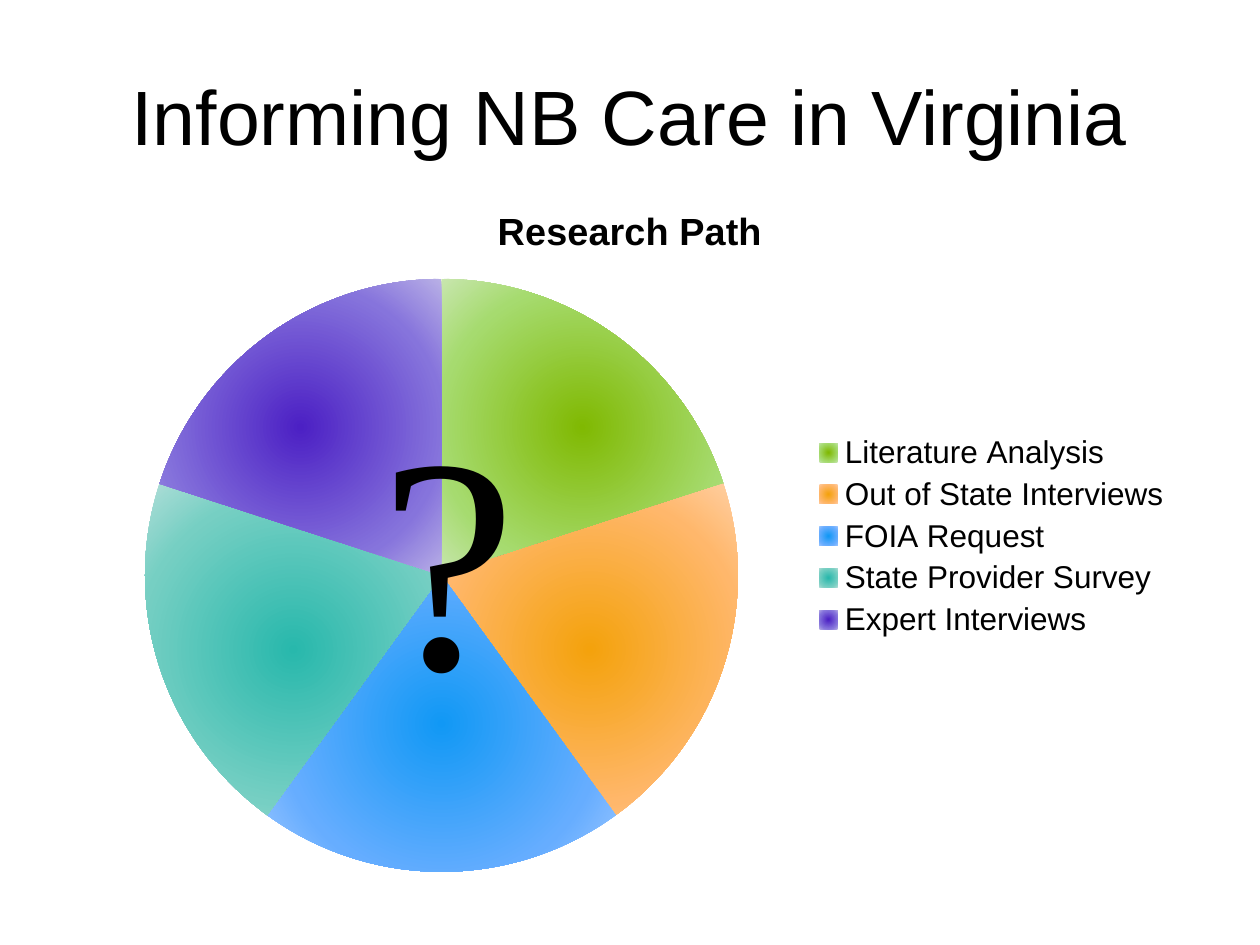
"""Build the Research Path slide with its pie chart and question mark."""
from dataclasses import dataclass

from pptx import Presentation
from pptx.chart.data import CategoryChartData
from pptx.dml.color import RGBColor
from pptx.enum.chart import XL_CHART_TYPE, XL_LEGEND_POSITION
from pptx.enum.text import MSO_ANCHOR, PP_ALIGN
from pptx.oxml import parse_xml
from pptx.oxml.ns import nsdecls
from pptx.util import Pt

PIE = XL_CHART_TYPE.PIE
RIGHT = XL_LEGEND_POSITION.RIGHT
CENTER = PP_ALIGN.CENTER
TOP, BOTTOM = MSO_ANCHOR.TOP, MSO_ANCHOR.BOTTOM
BLACK = RGBColor(0x00, 0x00, 0x00)
SANS, SERIF = "Arial", "Times New Roman"
CHART_TITLE = "Research Path"
PIE_LAYOUT = {"x": 0.06, "y": 0.14, "w": 0.54, "h": 0.83}


@dataclass(frozen=True)
class Slice:
    label: str
    value: int
    core: RGBColor
    middle: RGBColor
    rim: RGBColor


@dataclass(frozen=True)
class Label:
    text: str
    left: float
    top: float
    width: float
    height: float
    size: int
    font: str
    anchor: MSO_ANCHOR


SLICES = [
    Slice("Literature Analysis", 20, RGBColor(0x80, 0xB9, 0x02),
          RGBColor(0xA6, 0xDB, 0x6F), RGBColor(0xC8, 0xE6, 0xAE)),
    Slice("Out of State Interviews", 20, RGBColor(0xF4, 0xA2, 0x0C),
          RGBColor(0xFF, 0xB7, 0x6B), RGBColor(0xFF, 0xD0, 0xA4)),
    Slice("FOIA Request", 20, RGBColor(0x11, 0x98, 0xF5),
          RGBColor(0x66, 0xAD, 0xFF), RGBColor(0x9C, 0xC8, 0xFF)),
    Slice("State Provider Survey", 20, RGBColor(0x28, 0xB8, 0xAC),
          RGBColor(0x76, 0xCF, 0xC3), RGBColor(0xB0, 0xDE, 0xD8)),
    Slice("Expert Interviews", 20, RGBColor(0x4C, 0x20, 0xC4),
          RGBColor(0x86, 0x74, 0xDC), RGBColor(0xB9, 0xB0, 0xE6)),
]
LABELS = [
    Label("Informing NB Care in Virginia", 43.2, -9.36, 633.6, 105.12, 44, SANS, BOTTOM),
    Label("?", 210.24, 203.76, 54, 219.6, 175, SERIF, TOP),
]


def style_font(font, name: str, size: float, bold: bool = False) -> None:
    """Set the face, size, weight and colour of a font."""
    font.name, font.size, font.bold = name, Pt(size), bold
    font.color.rgb = BLACK


def fill_radial(point, part: Slice) -> None:
    """Fill a pie point with a gradient from its core to its rim."""
    stops = "".join(
        f'<a:gs pos="{pos}"><a:srgbClr val="{color}"/></a:gs>'
        for pos, color in ((0, part.core), (70000, part.middle), (100000, part.rim))
    )
    point.format.line.fill.background()
    sp_pr = point.format.line._get_or_add_ln().getparent()
    sp_pr.insert(0, parse_xml(
        f'<a:gradFill {nsdecls("a")} rotWithShape="1"><a:gsLst>{stops}</a:gsLst>'
        '<a:path path="circle"><a:fillToRect l="50000" t="50000" r="50000" b="50000"/>'
        '</a:path></a:gradFill>'
    ))


def place_plot(chart) -> None:
    """Fix the inner plot area as fractions of the chart frame."""
    plot_area = chart.plots[0]._element.getparent()
    for old in plot_area.findall("{*}layout"):
        plot_area.remove(old)
    sizes = "".join(f'<c:{key} val="{val}"/>' for key, val in PIE_LAYOUT.items())
    plot_area.insert(0, parse_xml(
        f'<c:layout {nsdecls("c")}><c:manualLayout><c:layoutTarget val="inner"/>'
        f'<c:xMode val="edge"/><c:yMode val="edge"/>{sizes}</c:manualLayout></c:layout>'
    ))


def add_pie(s, slices: list[Slice]) -> None:
    """Add the pie chart with its title and legend."""
    data = CategoryChartData()
    data.categories = [part.label for part in slices]
    data.add_series(CHART_TITLE, [part.value for part in slices])
    chart = s.shapes.add_chart(PIE, Pt(43.2), Pt(102.24), Pt(633.6), Pt(408.24), data).chart
    style_font(chart.font, SANS, 18)
    chart.has_title = True
    r = chart.chart_title.text_frame.paragraphs[0].add_run()
    r.text = CHART_TITLE
    style_font(r.font, SANS, 21.6, bold=True)
    chart.has_legend = True
    chart.legend.position = RIGHT
    chart.legend.include_in_layout = False
    plot = chart.plots[0]
    plot.vary_by_categories = True
    for i, part in enumerate(slices):
        fill_radial(plot.series[0].points[i], part)
    place_plot(chart)


def add_label(s, label: Label) -> None:
    """Add a centred text box."""
    sp = s.shapes.add_textbox(Pt(label.left), Pt(label.top), Pt(label.width), Pt(label.height))
    tf = sp.text_frame
    tf.word_wrap = True
    tf.vertical_anchor = label.anchor
    p = tf.paragraphs[0]
    p.alignment = CENTER
    r = p.add_run()
    r.text = label.text
    style_font(r.font, label.font, label.size)


def main() -> None:
    """Build and save the slide."""
    prs = Presentation()
    prs.slide_width, prs.slide_height = Pt(720), Pt(540)
    s = prs.slides.add_slide(prs.slide_layouts[6])
    add_pie(s, SLICES)
    for label in LABELS:
        add_label(s, label)
    prs.save("out.pptx")


if __name__ == "__main__":
    main()
